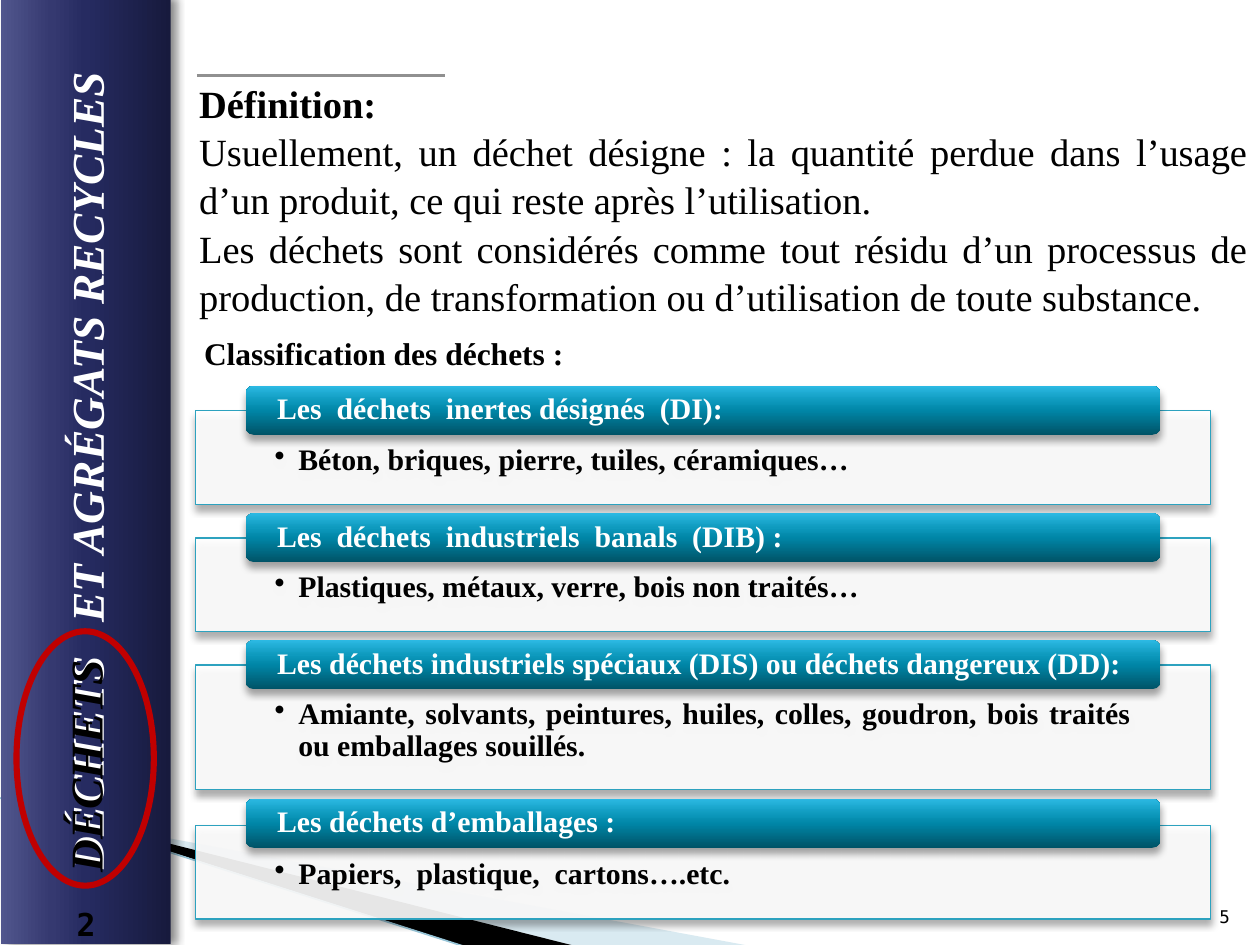
import dataclasses
import typing

import lxml.etree
import pptx
import pptx.dml.color
import pptx.enum.shapes
import pptx.enum.text
import pptx.oxml.ns
import pptx.util

Pt = pptx.util.Pt
qn = pptx.oxml.ns.qn
ALIGN = pptx.enum.text.PP_ALIGN
ANCHOR = pptx.enum.text.MSO_ANCHOR
SHAPE = pptx.enum.shapes.MSO_SHAPE
SERIF = "Times New Roman"
MONO = "DejaVu Sans Mono"
COLORS = {
    "white": "FFFFFF", "black": "000000", "red": "C00000", "grey": "909090",
    "teal": "2DA2BF", "wave": "A0CBDC", "wave_edge": "97C5D8",
}
GRADIENTS = {
    "sidebar": [(0, "171A3D"), (50, "262B61"), (70, "353970"), (100, "51568D")],
    "banner": [(0, "005367"), (50, "0086A7"), (70, "0E9ABE"), (100, "2CB9E3")],
}


@dataclasses.dataclass
class Box:
    left: float
    top: float
    width: float
    height: float

    def lengths(self) -> list:
        return [Pt(value) for value in (self.left, self.top, self.width, self.height)]


@dataclasses.dataclass
class Style:
    size: float
    color: str = "black"
    bold: bool = False
    italic: bool = False
    font: str = SERIF


@dataclasses.dataclass
class WasteClass:
    heading: str
    examples: str
    banner_top: float
    card_top: float
    card_height: float = 53.5


def rgb(name: str) -> pptx.dml.color.RGBColor:
    return pptx.dml.color.RGBColor.from_string(COLORS[name])


def add_element(parent: typing.Any, tag: str, **attributes: str) -> typing.Any:
    element = lxml.etree.SubElement(parent, qn(tag))
    for key, value in attributes.items():
        element.set(key, value)
    return element


def fill_solid(shape: typing.Any, color: str, alpha: int = 100) -> None:
    shape.fill.solid()
    shape.fill.fore_color.rgb = rgb(color)
    if alpha < 100:
        color_element = shape._element.xpath("./p:spPr/a:solidFill/a:srgbClr")[0]
        add_element(color_element, "a:alpha", val=str(alpha * 1000))


def fill_gradient(shape: typing.Any, name: str) -> None:
    shape.fill.gradient()
    shape.fill.gradient_angle = 90
    stops = shape._element.xpath("./p:spPr/a:gradFill/a:gsLst")[0]
    for stop in list(stops):
        stops.remove(stop)
    for position, color in GRADIENTS[name]:
        stop = add_element(stops, "a:gs", pos=str(position * 1000))
        add_element(stop, "a:srgbClr", val=color)


def add_shadow(shape: typing.Any, alpha: int, blur: float, direction: int = 90) -> None:
    effects = shape._element.xpath("./p:spPr/a:effectLst")[0]
    shadow = add_element(effects, "a:outerShdw", blurRad=str(Pt(blur)), dist=str(Pt(3)),
                         dir=str(direction * 60000), algn="ctr", rotWithShape="0")
    color = add_element(shadow, "a:srgbClr", val=COLORS["black"])
    add_element(color, "a:alpha", val=str(alpha * 1000))


def set_line(shape: typing.Any, color: typing.Optional[str], width: float = 1) -> None:
    if color is None:
        shape.line.fill.background()
    else:
        shape.line.color.rgb = rgb(color)
        shape.line.width = Pt(width)


def add_shape(slide: typing.Any, kind: typing.Any, box: Box) -> typing.Any:
    shape = slide.shapes.add_shape(kind, *box.lengths())
    shape.shadow.inherit = False
    return shape


def add_line(slide: typing.Any, start: tuple, end: tuple, color: str, width: float) -> None:
    line = slide.shapes.add_connector(
        pptx.enum.shapes.MSO_CONNECTOR.STRAIGHT, *[Pt(value) for value in start + end])
    set_line(line, color, width)
    add_element(line._element.xpath("./p:spPr")[0], "a:effectLst")


def add_wave(slide: typing.Any, points: list, color: str, alpha: int = 100) -> None:
    vertices = [(Pt(x), Pt(y)) for x, y in points]
    builder = slide.shapes.build_freeform(*vertices[0])
    builder.add_line_segments(vertices[1:], close=True)
    wave = builder.convert_to_shape()
    wave.shadow.inherit = False
    fill_solid(wave, color, alpha)
    set_line(wave, None)


def format_paragraph(paragraph: typing.Any, style: Style, alignment: typing.Any) -> None:
    paragraph.alignment = alignment
    for run in paragraph.runs:
        run.font.name = style.font
        run.font.size = Pt(style.size)
        run.font.bold = style.bold
        run.font.italic = style.italic
        run.font.color.rgb = rgb(style.color)


def set_text(shape: typing.Any, text: str, style: Style, alignment: typing.Any = ALIGN.LEFT,
             anchor: typing.Any = ANCHOR.TOP, wrap: bool = True,
             margins: tuple = (7.2, 3.6, 7.2, 3.6)) -> typing.Any:
    frame = shape.text_frame
    frame.text = text
    frame.word_wrap = wrap
    frame.vertical_anchor = anchor
    frame.margin_left, frame.margin_top, frame.margin_right, frame.margin_bottom = [
        Pt(value) for value in margins]
    for paragraph in frame.paragraphs:
        format_paragraph(paragraph, style, alignment)
    return frame


def place(shape: typing.Any, box: Box) -> None:
    shape.left, shape.top, shape.width, shape.height = box.lengths()


def add_label(slide: typing.Any, box: Box, text: str, style: Style, **options: typing.Any) -> typing.Any:
    label = slide.shapes.add_textbox(*box.lengths())
    set_text(label, text, style, **options)
    return label


def add_waste_class(slide: typing.Any, waste: WasteClass) -> None:
    card = add_shape(slide, SHAPE.RECTANGLE, Box(111.6, waste.card_top, 580.3, waste.card_height))
    fill_solid(card, "white", 90)
    set_line(card, "teal", 0.75)
    add_shadow(card, 35, 4)
    frame = set_text(card, waste.examples, Style(17, bold=True), ALIGN.JUSTIFY,
                     margins=(45.4, 19.4, 45.4, 9.4))
    frame.paragraphs[0].line_spacing = 0.9
    properties = frame.paragraphs[0]._p.get_or_add_pPr()
    properties.set("marL", str(Pt(13.5)))
    properties.set("indent", str(-Pt(13.5)))
    add_element(properties, "a:buChar", char="•")

    banner = add_shape(slide, SHAPE.ROUNDED_RECTANGLE, Box(140.4, waste.banner_top, 522.7, 28))
    fill_gradient(banner, "banner")
    set_line(banner, None)
    add_shadow(banner, 35, 4)
    frame = set_text(banner, waste.heading, Style(17, "white", True), ALIGN.JUSTIFY,
                     ANCHOR.MIDDLE, margins=(16.6, 0, 16.6, 0))
    frame.paragraphs[0].line_spacing = 0.9


def main() -> None:
    presentation = pptx.Presentation()
    presentation.slide_width, presentation.slide_height = Pt(720), Pt(540)
    slide = presentation.slides.add_slide(presentation.slide_layouts[1])
    title, body = slide.placeholders[0], slide.placeholders[1]

    add_wave(slide, [(39.6, 468.5), (428.4, 540.5), (328.3, 540.5), (39.6, 468)], "wave", 40)
    add_wave(slide, [(38.2, 467.3), (329, 540.7), (267.8, 541.4), (38.9, 468)], "black")
    add_line(slide, (-0.7, 455.8), (267.1, 541.4), "wave_edge", 0.95)

    sidebar = add_shape(slide, SHAPE.RECTANGLE, Box(-221.8, 220.3, 541.4, 97.2))
    sidebar.rotation = 270
    fill_gradient(sidebar, "sidebar")
    set_line(sidebar, None)
    add_shadow(sidebar, 45, 5, 0)
    heading = Style(26, "white", True, True)
    set_text(sidebar, "DÉCHETS   ET AGRÉGATS RECYCLES", heading, ALIGN.CENTER, ANCHOR.MIDDLE)
    ring = add_shape(slide, SHAPE.OVAL, Box(9.4, 360.7, 78.5, 145.4))
    ring.fill.background()
    set_line(ring, "red", 3.5)
    highlight = add_label(slide, Box(-24.5, 413.3, 146.2, 38.9), "DÉCHETS",
                          dataclasses.replace(heading, color="black"))
    highlight.rotation = 270

    place(body, Box(106.6, 43.2, 613.4, 140.4))
    definition = set_text(body, "\n".join([
        "Définition:",
        "Usuellement, un déchet désigne : la quantité perdue dans l’usage d’un produit, ce qui reste après l’utilisation.",
        "Les déchets sont considérés comme tout résidu d’un processus de production, de transformation ou d’utilisation de toute substance.",
    ]), Style(22), ALIGN.JUSTIFY, ANCHOR.MIDDLE)
    for paragraph in definition.paragraphs:
        paragraph.line_spacing = 1.05
        paragraph.space_before = Pt(0)
        properties = paragraph._p.get_or_add_pPr()
        properties.set("marL", "0")
        properties.set("indent", "0")
        add_element(properties, "a:buNone")
    definition.paragraphs[0].runs[0].font.bold = True
    add_line(slide, (112.5, 43.2), (254.2, 43.2), "grey", 2)

    place(title, Box(109.4, 187.2, 221.8, 28.8))
    set_text(title, "Classification des déchets :", Style(18, bold=True), wrap=False)

    for waste in [
        WasteClass("Les  déchets  inertes désignés  (DI):",
                   "Béton, briques, pierre, tuiles, céramiques…", 220.5, 234.7),
        WasteClass("Les  déchets  industriels  banals  (DIB) :",
                   "Plastiques, métaux, verre, bois non traités…", 293.2, 307.4),
        WasteClass("Les déchets industriels spéciaux (DIS) ou déchets dangereux (DD):",
                   "Amiante, solvants, peintures, huiles, colles, goudron, bois traités ou emballages souillés.",
                   365.8, 380, 71.3),
        WasteClass("Les déchets d’emballages :", "Papiers,  plastique,  cartons….etc.", 456.5, 471.6),
    ]:
        add_waste_class(slide, waste)

    add_label(slide, Box(681.1, 504.7, 28.8, 28.8), "5", Style(10, font=MONO),
              alignment=ALIGN.RIGHT, anchor=ANCHOR.BOTTOM)
    add_label(slide, Box(36.7, 513.4, 25.9, 28.8), "2", Style(18, bold=True, font=MONO), wrap=False)
    presentation.save("out.pptx")


if __name__ == "__main__":
    main()
